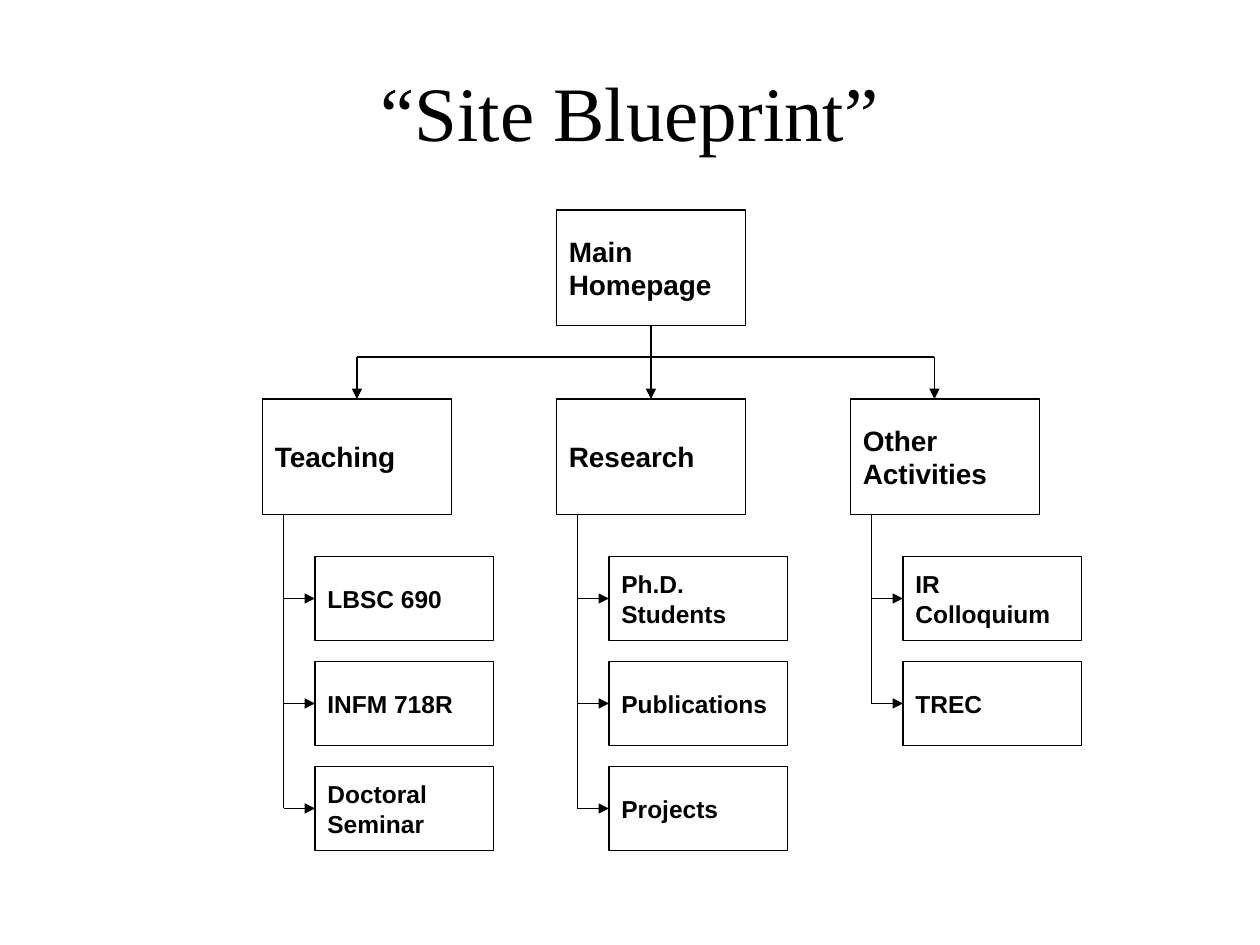
from lxml.etree import SubElement
from pptx import Presentation
from pptx.dml.color import RGBColor
from pptx.enum.shapes import MSO_CONNECTOR, MSO_SHAPE
from pptx.enum.text import MSO_ANCHOR, PP_ALIGN
from pptx.oxml.ns import qn
from pptx.util import Pt

PX = 9525  # EMU in one px, 96 px to the inch
BLACK = RGBColor(0, 0, 0)

SECTION_WIDTH, SECTION_HEIGHT = 144, 88
SECTION_LEFT, SECTION_TOP, SECTION_STEP = 200, 304, 224
HOME_TOP, BUS_Y = 160, 272
PAGE_WIDTH, PAGE_HEIGHT = 136, 64
PAGE_TOP, PAGE_STEP, PAGE_INDENT = 424, 80, 40
TRUNK_INDENT = 16

# "\n" starts a paragraph, "\v" breaks a line within one
SECTIONS = [
    ("Teaching", ["LBSC 690", "INFM 718R", "Doctoral\vSeminar"]),
    ("Research", ["Ph.D.\nStudents", "Publications", "Projects"]),
    ("Other\vActivities", ["IR\nColloquium", "TREC"]),
]
DROP_XS = [272, 496, 712]  # the last arrow lands just left of its box's middle


def add_box(text, left, top, width, height, size):
    box = page.shapes.add_shape(
        MSO_SHAPE.RECTANGLE, left * PX, top * PX, width * PX, height * PX)
    box.shadow.inherit = False
    box.fill.background()
    box.line.color.rgb = BLACK
    box.line.width = Pt(0.75)
    frame = box.text_frame
    frame.text = text
    frame.word_wrap = False
    frame.vertical_anchor = MSO_ANCHOR.MIDDLE
    for para in frame.paragraphs:
        para.alignment = PP_ALIGN.LEFT
        for span in para.runs:
            span.font.name = "Arial"
            span.font.size = Pt(size)
            span.font.bold = True
            span.font.color.rgb = BLACK
    return box


def add_line(x1, y1, x2, y2, arrow=False):
    line = page.shapes.add_connector(
        MSO_CONNECTOR.STRAIGHT, x1 * PX, y1 * PX, x2 * PX, y2 * PX)
    line.line.color.rgb = BLACK
    line.line.width = Pt(0.75)
    if arrow:
        SubElement(line.line._get_or_add_ln(), qn("a:tailEnd"), type="triangle")
    SubElement(line._element.spPr, qn("a:effectLst"))
    return line


deck = Presentation()
deck.slide_width, deck.slide_height = 960 * PX, 720 * PX
page = deck.slides.add_slide(deck.slide_layouts[5])

title = page.shapes.title
title.left, title.top, title.width, title.height = 72 * PX, 24 * PX, 816 * PX, 120 * PX
title.text_frame.text = "“Site Blueprint”"
title.text_frame.vertical_anchor = MSO_ANCHOR.MIDDLE
heading = title.text_frame.paragraphs[0]
heading.alignment = PP_ALIGN.CENTER
heading.runs[0].font.name = "Times New Roman"
heading.runs[0].font.size = Pt(44)
heading.runs[0].font.color.rgb = BLACK

home = add_box("Main\nHomepage", SECTION_LEFT + SECTION_STEP, HOME_TOP,
               SECTION_WIDTH, SECTION_HEIGHT, 16)
add_line(DROP_XS[0], BUS_Y, DROP_XS[-1], BUS_Y)

for column, (name, pages) in enumerate(SECTIONS):
    left = SECTION_LEFT + column * SECTION_STEP
    section = add_box(name, left, SECTION_TOP, SECTION_WIDTH, SECTION_HEIGHT, 16)

    drop_x = DROP_XS[column]
    under_home = drop_x == SECTION_LEFT + SECTION_STEP + SECTION_WIDTH // 2
    drop_top = HOME_TOP + SECTION_HEIGHT if under_home else BUS_Y
    drop = add_line(drop_x, drop_top, drop_x, SECTION_TOP, arrow=True)
    if under_home:
        drop.begin_connect(home, 2)
    if drop_x == left + SECTION_WIDTH // 2:
        drop.end_connect(section, 0)

    trunk_x = left + TRUNK_INDENT
    for row, label in enumerate(pages):
        top = PAGE_TOP + row * PAGE_STEP
        middle = top + PAGE_HEIGHT // 2
        leaf = add_box(label, left + PAGE_INDENT, top, PAGE_WIDTH, PAGE_HEIGHT, 14)
        branch = add_line(trunk_x, middle, left + PAGE_INDENT, middle, arrow=True)
        branch.end_connect(leaf, 1)
    add_line(trunk_x, middle, trunk_x, SECTION_TOP + SECTION_HEIGHT)

deck.save("out.pptx")
